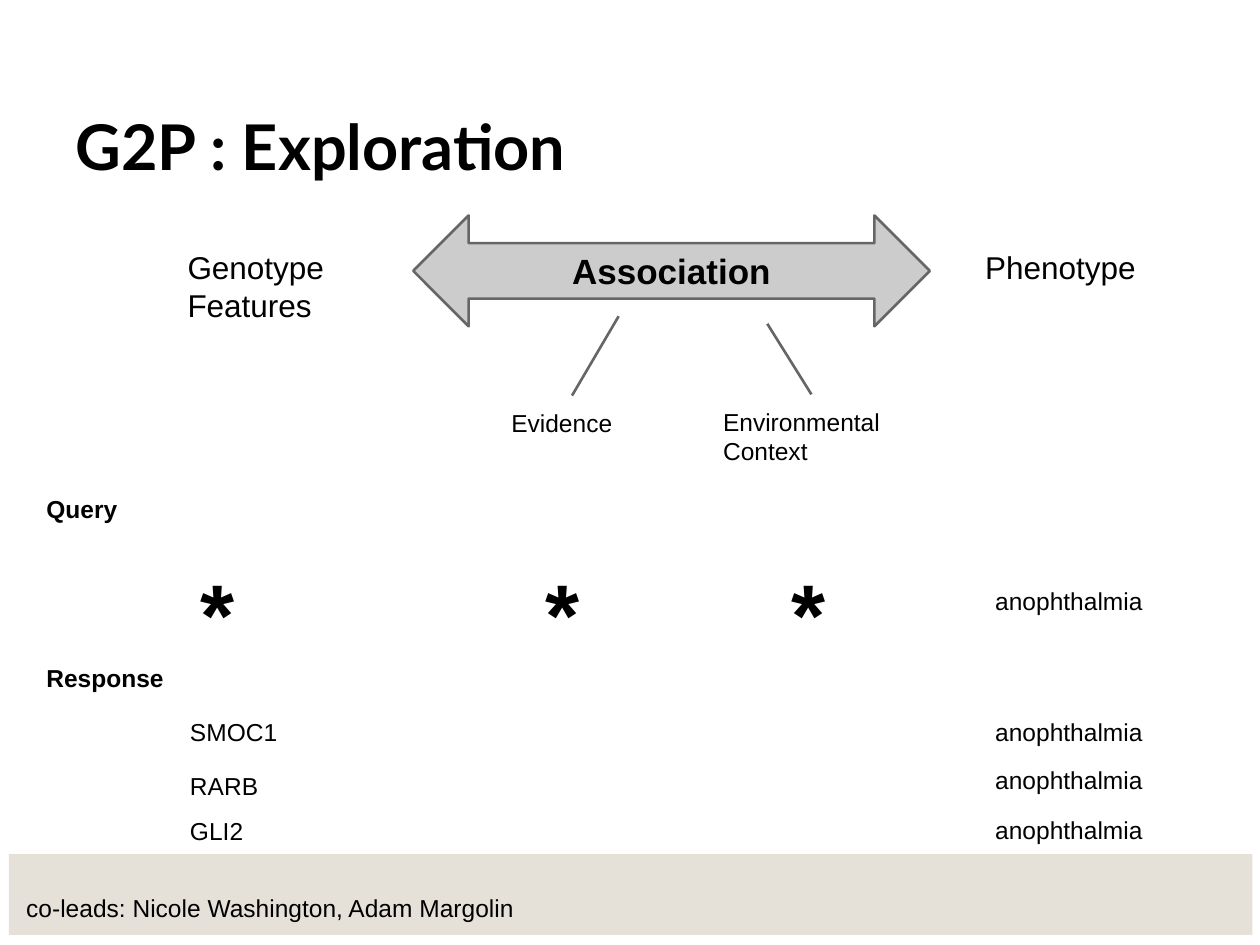
from dataclasses import dataclass

from lxml import etree
from pptx import Presentation
from pptx.dml.color import RGBColor
from pptx.enum.shapes import MSO_CONNECTOR as CONNECTOR, MSO_SHAPE as SHAPE
from pptx.enum.text import MSO_ANCHOR as ANCHOR, MSO_AUTO_SIZE as AUTO_SIZE, PP_ALIGN as ALIGN
from pptx.oxml.ns import qn
from pptx.util import Inches, Pt


@dataclass(frozen=True)
class Theme:
    ink: RGBColor = RGBColor(0x00, 0x00, 0x00)
    outline: RGBColor = RGBColor(0x66, 0x66, 0x66)
    arrow: RGBColor = RGBColor(0xCC, 0xCC, 0xCC)
    band: RGBColor = RGBColor(0xD6, 0xD1, 0xC4)
    band_opacity: int = 63
    heading_font: str = "Lato"
    body_font: str = "Arial"
    title: int = 36
    wildcard: int = 50
    association: int = 20
    entity: int = 18
    body: int = 14
    stroke: float = 1.5


@dataclass(frozen=True)
class Box:
    left: float
    top: float
    width: float
    height: float

    def inner(self, dx, dy, width, height):
        return Box(self.left + dx, self.top + dy, width, height)

    def lengths(self):
        return [Inches(v) for v in (self.left, self.top, self.width, self.height)]


THEME = Theme()


def write(shape, text, size, bold=False, font=THEME.body_font,
          anchor=ANCHOR.TOP, align=ALIGN.LEFT):
    frame = shape.text_frame
    frame.word_wrap = True
    frame.auto_size = AUTO_SIZE.NONE
    frame.vertical_anchor = anchor
    frame.margin_left = frame.margin_right = Inches(0.1)
    frame.margin_top = frame.margin_bottom = Inches(0.1)
    paragraph = frame.paragraphs[0]
    paragraph.alignment = align
    run = paragraph.add_run()
    run.text = text
    run.font.name = font
    run.font.size = Pt(size)
    run.font.bold = bold
    run.font.color.rgb = THEME.ink


def add_label(slide, box, text, size=THEME.body, bold=False):
    write(slide.shapes.add_textbox(*box.lengths()), text, size, bold)


def add_filled(slide, box, preset, color):
    shape = slide.shapes.add_shape(preset, *box.lengths())
    shape.shadow.inherit = False
    shape.fill.solid()
    shape.fill.fore_color.rgb = color
    shape.line.fill.background()
    return shape


def add_branch(slide, box, start, end):
    points = [Inches(v) for x, y in (start, end) for v in (box.left + x, box.top + y)]
    branch = slide.shapes.add_connector(CONNECTOR.STRAIGHT, *points)
    branch.line.color.rgb = THEME.outline
    branch.line.width = Pt(THEME.stroke)
    etree.SubElement(branch._element.spPr, qn("a:effectLst"))


def place_title(slide, box):
    title = slide.shapes.title
    title.left, title.top, title.width, title.height = box.lengths()
    write(title, "G2P : Exploration", THEME.title, True, THEME.heading_font, ANCHOR.BOTTOM)


def place_footer(slide, box):
    band = add_filled(slide, box, SHAPE.RECTANGLE, THEME.band)
    color = band.fill._xPr.find(qn("a:solidFill"))[0]
    etree.SubElement(color, qn("a:alpha"), val=str(THEME.band_opacity * 1000))
    add_label(slide, box.inner(0.04, 0.21, 4.56, 0.37),
              "co-leads: Nicole Washington, Adam Margolin")


def place_association(slide, box):
    """Genotype and phenotype joined by an arrow, with two branches below it."""
    arrow = add_filled(slide, box.inner(1.89, 0, 4.1, 0.88), SHAPE.LEFT_RIGHT_ARROW, THEME.arrow)
    arrow.line.color.rgb = THEME.outline
    arrow.line.width = Pt(THEME.stroke)
    write(arrow, "Association", THEME.association, True,
          anchor=ANCHOR.MIDDLE, align=ALIGN.CENTER)
    for dx, entity in ((0, "Genotype Features"), (6.33, "Phenotype")):
        add_label(slide, box.inner(dx, 0.16, 2.14, 0.98), entity, THEME.entity)

    add_label(slide, box.inner(2.57, 1.43, 1.16, 0.59), "Evidence")
    add_label(slide, box.inner(4.25, 1.42, 1.59, 0.59), "Environmental Context")
    add_branch(slide, box, (3.15, 1.43), (3.52, 0.8))
    add_branch(slide, box, (5.05, 1.42), (4.7, 0.86))


def place_heading(slide, box, text):
    add_label(slide, box.inner(0, 0, 1.43, 0.59), text, bold=True)


def place_phenotype(slide, box, dy):
    add_label(slide, box.inner(7.53, dy, 1.68, 0.93), "anophthalmia")


def place_query(slide, box):
    place_heading(slide, box, "Query")
    for dx in (1.22, 3.96, 5.91):
        add_label(slide, box.inner(dx, 0.52, 0.51, 0.71), "*", THEME.wildcard, True)
    place_phenotype(slide, box, 0.73)


def place_response(slide, box):
    place_heading(slide, box, "Response")
    rows = (("SMOC1", 0.43, 0.43), ("RARB", 0.86, 0.81), ("GLI2", 1.22, 1.21))
    for gene, gene_dy, phenotype_dy in rows:
        add_label(slide, box.inner(1.14, gene_dy, 1.16, 0.84), gene)
        place_phenotype(slide, box, phenotype_dy)


def main():
    deck = Presentation()
    deck.slide_width, deck.slide_height = Inches(10), Inches(7.5)
    title_only = deck.slide_layouts[5]
    slide = deck.slides.add_slide(title_only)
    place_footer(slide, Box(0.07, 6.78, 9.87, 0.64))
    place_title(slide, Box(0.5, 0.3, 9, 1.25))
    place_association(slide, Box(1.39, 1.71, 8.47, 2.02))
    place_query(slide, Box(0.27, 3.82, 9.21, 1.34))
    place_response(slide, Box(0.27, 5.16, 9.21, 2.14))
    deck.save("out.pptx")


if __name__ == "__main__":
    main()
